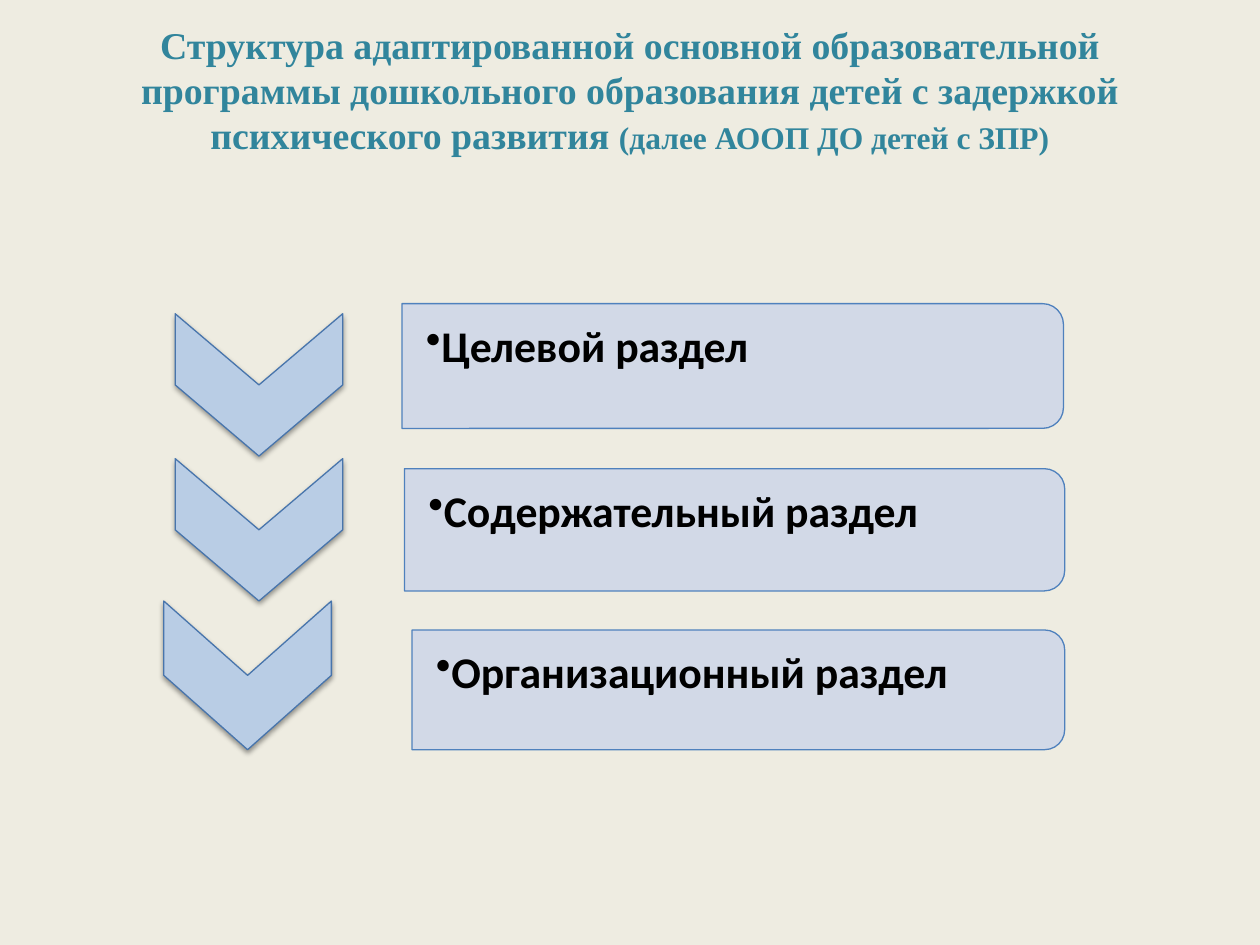
from dataclasses import dataclass

from lxml.etree import SubElement as Sub
from pptx import Presentation
from pptx.dml.color import RGBColor as RGB
from pptx.enum.shapes import MSO_SHAPE as Kind
from pptx.enum.text import MSO_ANCHOR as Anchor, MSO_AUTO_SIZE as Fit, PP_ALIGN as Align
from pptx.oxml.ns import qn
from pptx.shapes.autoshape import Shape
from pptx.shapes.shapetree import GroupShapes as Group
from pptx.util import Inches, Pt

PAPER = RGB(0xEE, 0xEC, 0xE1)
TEAL = RGB(0x31, 0x85, 0x9C)
SKY = RGB(0xB9, 0xCD, 0xE5)
SKY_EDGE = RGB(0x48, 0x75, 0xAC)
PALE = RGB(0xD0, 0xD8, 0xE8)
PALE_EDGE = RGB(0x4F, 0x81, 0xBD)
BLACK = RGB(0, 0, 0)
PAD = 0.05  # gap between a bar's edge and its text box


@dataclass
class Box:
    left: float
    top: float
    width: float
    height: float


@dataclass
class Part:
    label: str
    arrow: Box
    bar: Box


PARTS = [
    Part("Целевой раздел", Box(1.39, 2.49, 1.33, 1.13), Box(3.19, 2.41, 5.25, 0.99)),
    Part("Содержательный раздел", Box(1.39, 3.64, 1.33, 1.13), Box(3.21, 3.72, 5.24, 0.97)),
    Part("Организационный раздел", Box(1.3, 4.77, 1.33, 1.18), Box(3.27, 5, 5.18, 0.95)),
]


def add_turned(group: Group, kind: Kind, box: Box, fill: RGB, edge: RGB) -> Shape:
    """Add a shape turned by 90 degrees so that it covers the given box."""
    shift = (box.width - box.height) / 2
    shape = group.add_shape(kind, Inches(box.left + shift), Inches(box.top - shift),
                            Inches(box.height), Inches(box.width))
    shape.rotation = 90
    shape.shadow.inherit = False
    shape.fill.solid()
    shape.fill.fore_color.rgb = fill
    shape.line.color.rgb = edge
    shape.line.width = Pt(0.75)
    return shape


def add_arrow(group: Group, box: Box) -> None:
    shape = add_turned(group, Kind.CHEVRON, box, SKY, SKY_EDGE)
    effects = shape.element.spPr.find(qn("a:effectLst"))
    shadow = Sub(effects, qn("a:outerShdw"), blurRad=str(Pt(3.1)), dist=str(Pt(1.6)),
                 dir="5400000", rotWithShape="0")
    color = Sub(shadow, qn("a:srgbClr"), val=str(BLACK))
    Sub(color, qn("a:alpha"), val="38000")


def add_bar(group: Group, box: Box) -> None:
    shape = add_turned(group, Kind.ROUND_2_SAME_RECTANGLE, box, PALE, PALE_EDGE)
    color = shape.element.spPr.find(qn("a:solidFill")).find(qn("a:srgbClr"))
    Sub(color, qn("a:alpha"), val="90000")


def add_label(group: Group, label: str, bar: Box) -> None:
    text = group.add_textbox(Inches(bar.left), Inches(bar.top + PAD),
                             Inches(bar.width - PAD), Inches(bar.height - 2 * PAD))
    frame = text.text_frame
    frame.word_wrap = True
    frame.vertical_anchor = Anchor.TOP
    frame.margin_left, frame.margin_top = Inches(0.19), Inches(0.07)
    frame.margin_right = frame.margin_bottom = Inches(0.02)
    line = frame.paragraphs[0]
    Sub(line._p.get_or_add_pPr(), qn("a:buChar"), char="•")
    run = line.add_run()
    run.text = label
    font = run.font
    font.name, font.size, font.bold = "Calibri", Pt(25), True
    font.color.rgb = BLACK


# Slide and background
deck = Presentation()
deck.slide_width, deck.slide_height = Inches(10), Inches(7.5)
slide = deck.slides.add_slide(deck.slide_layouts[5])
slide.background.fill.solid()
slide.background.fill.fore_color.rgb = PAPER

# Title
title = slide.shapes.title
title.left, title.top = Inches(0.5), Inches(0.3)
title.width, title.height = Inches(9), Inches(1.25)
frame = title.text_frame
frame.word_wrap = True
frame.auto_size = Fit.NONE
frame.vertical_anchor = Anchor.MIDDLE
frame.margin_bottom = Inches(0.48)
line = frame.paragraphs[0]
line.alignment = Align.CENTER
for words, size in [
    ("Структура адаптированной основной образовательной программы "
     "дошкольного образования детей с задержкой психического развития ", 21.6),
    ("(далее АООП ДО детей с ЗПР)", 18),
]:
    run = line.add_run()
    run.text = words
    font = run.font
    font.name, font.size, font.bold = "Times New Roman", Pt(size), True
    font.color.rgb = TEAL

# Chevron list
group = slide.shapes.add_group_shape().shapes
for part in PARTS:
    add_arrow(group, part.arrow)
    add_bar(group, part.bar)
    add_label(group, part.label, part.bar)

deck.save("out.pptx")
